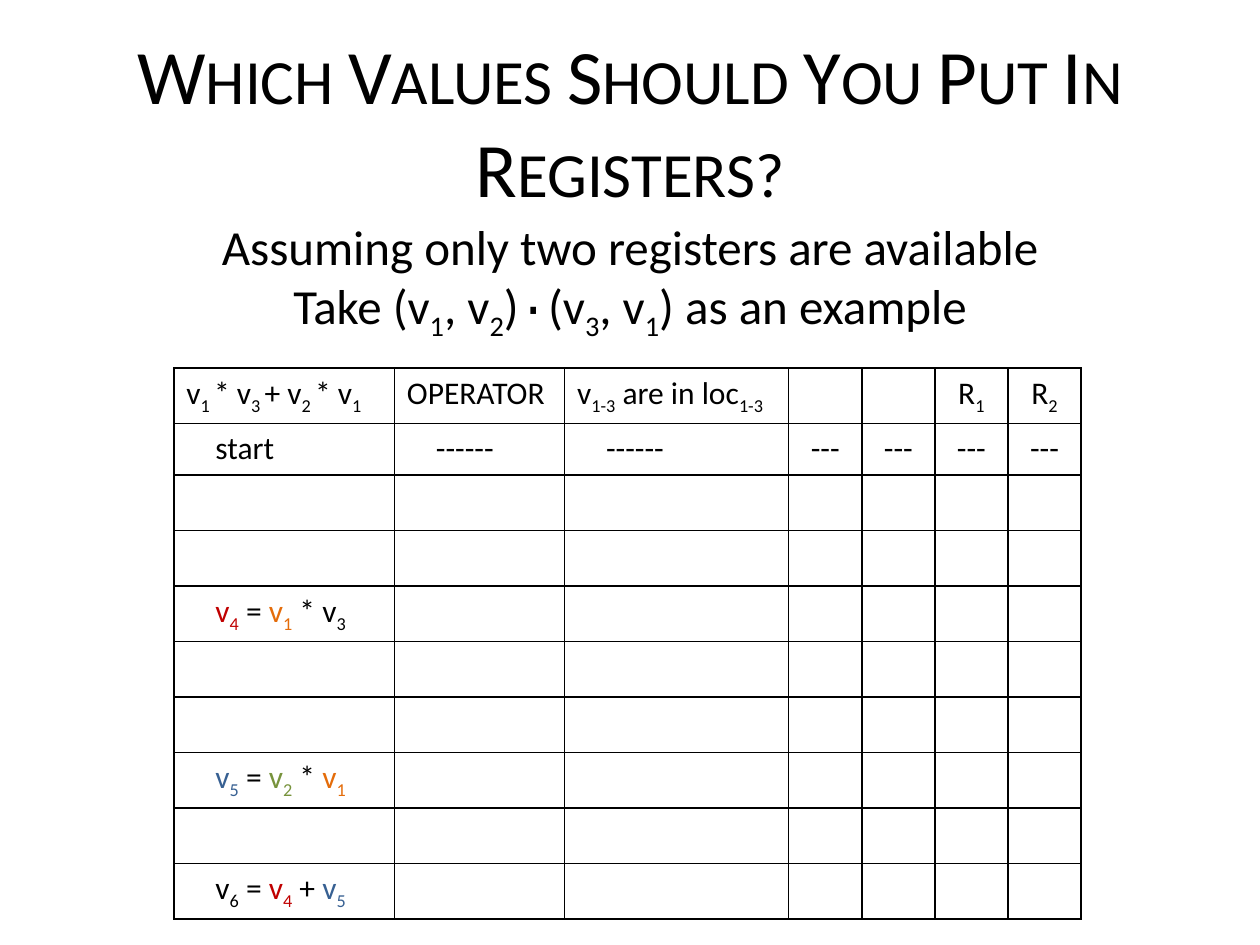
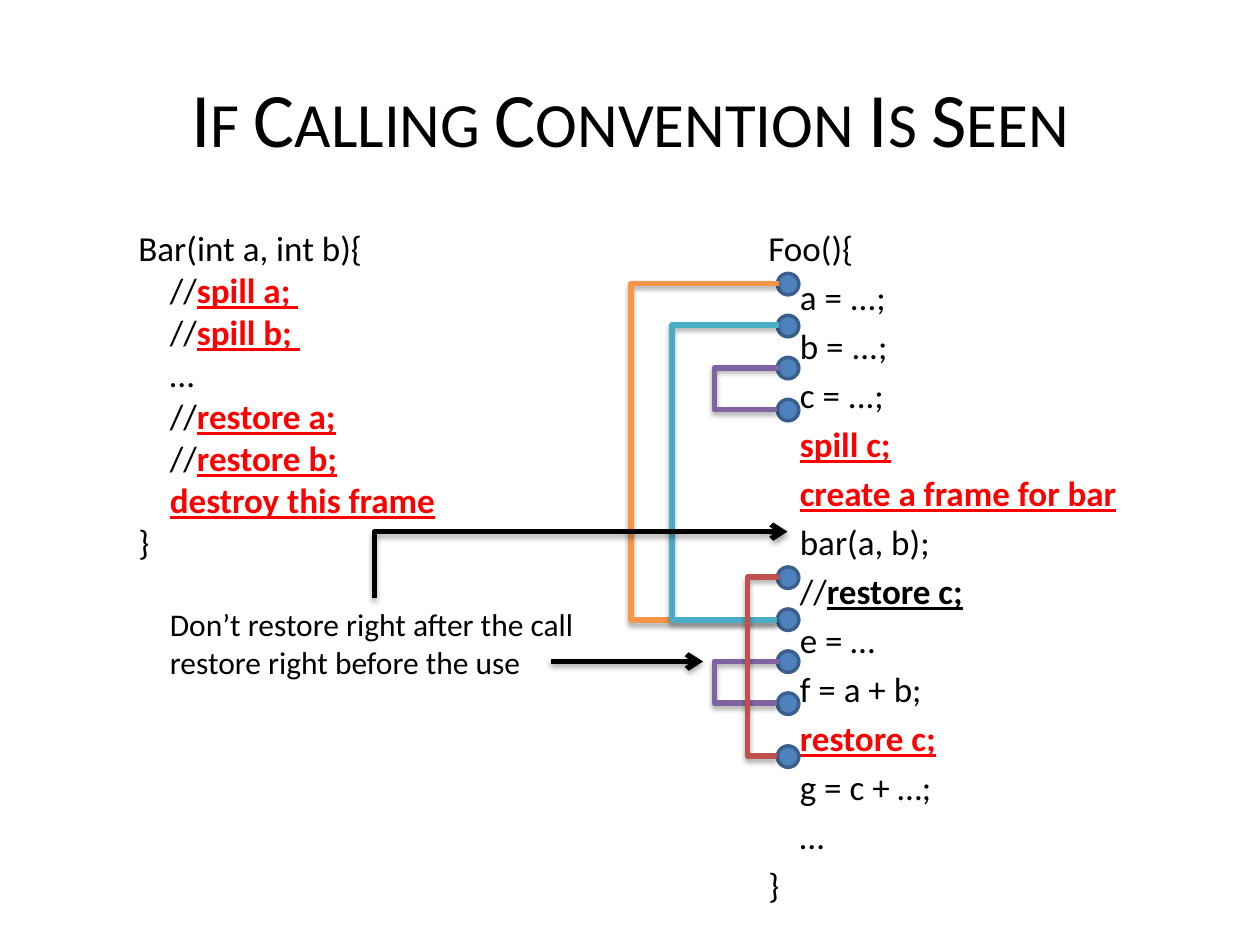
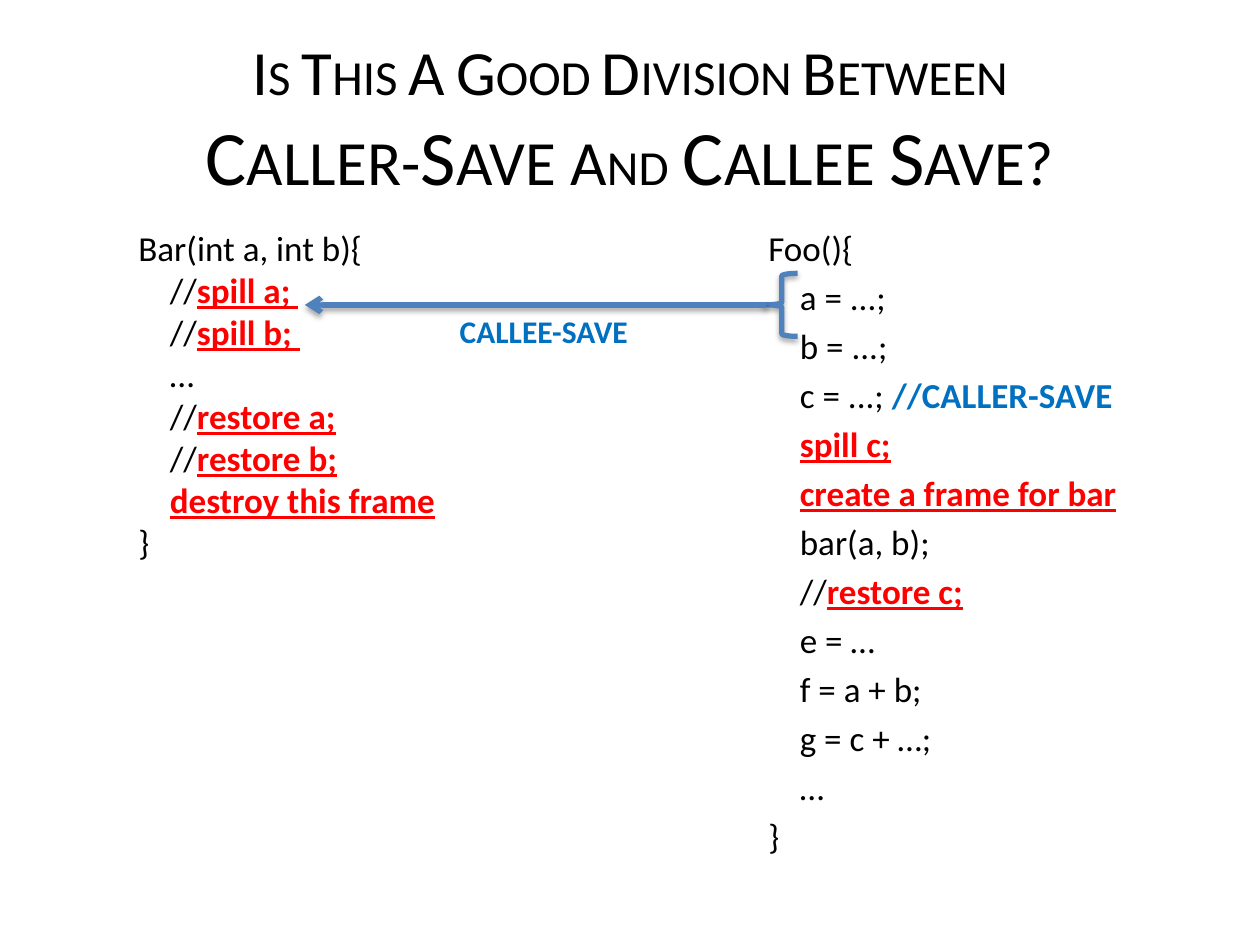
from itertools import groupby

from lxml import etree
from pptx import Presentation
from pptx import util as u
from pptx.dml.color import RGBColor
from pptx.enum import shapes, text
from pptx.oxml import ns

FONT = "Calibri"
BLACK = RGBColor(0x00, 0x00, 0x00)
RED = RGBColor(0xFF, 0x00, 0x00)
LABEL_BLUE = RGBColor(0x00, 0x70, 0xC0)
BLUE = RGBColor(0x4F, 0x81, 0xBD)
DOT_LINE = RGBColor(0x3A, 0x5F, 0x8C)
ORANGE = RGBColor(0xF7, 0x96, 0x46)
TEAL = RGBColor(0x4B, 0xAC, 0xC6)
PURPLE = RGBColor(0x80, 0x64, 0xA2)
BRICK = RGBColor(0xC0, 0x50, 0x4D)
V1_COLOR = RGBColor(0xE4, 0x6C, 0x0A)
V2_COLOR = RGBColor(0x77, 0x93, 0x3C)
V4_COLOR = RGBColor(0xC0, 0x00, 0x00)
V5_COLOR = RGBColor(0x37, 0x60, 0x92)

CENTER = text.PP_ALIGN.CENTER
INDENT = 0.25


def child(parent, tag, **attrs):
    return etree.SubElement(parent, ns.qn(tag), {k: str(v) for k, v in attrs.items()})


def add_run(p, content, size, color=BLACK, bold=False, underline=False, sub=False, font=FONT):
    r = p.add_run()
    r.text = content
    r.font.name = font
    r.font.size = u.Pt(size)
    r.font.color.rgb = color
    if bold:
        r.font.bold = True
    if underline:
        r.font.underline = True
    if sub:
        r.font._element.set("baseline", "-25000")


def add_pieces(p, pieces, size):
    for piece in [pieces] if isinstance(pieces, str) else pieces:
        if isinstance(piece, str):
            add_run(p, piece, size)
        else:
            content, style = piece
            add_run(p, content, size, **style)


def marked(content, color=RED):
    return content, dict(color=color, bold=True, underline=True)


def var(index, color=BLACK, name="v"):
    return [(name, dict(color=color)), (index, dict(color=color, sub=True))]


def indent(p, inches):
    p._p.get_or_add_pPr().set("marL", str(u.Inches(inches)))


def add_title(s, top, *lines):
    title = s.shapes.title
    title.left, title.top = u.Inches(0.5), u.Inches(top)
    title.width, title.height = u.Inches(9), u.Inches(1.25)
    tf = title.text_frame
    tf.auto_size = text.MSO_AUTO_SIZE.NONE
    tf.vertical_anchor = text.MSO_ANCHOR.MIDDLE
    p = tf.paragraphs[0]
    p.alignment = CENTER
    for i, line in enumerate(lines):
        if i:
            p.add_line_break()
        for words, big, small in line:
            for is_capital, letters in groupby(words, str.isupper):
                add_run(p, "".join(letters).upper(), big if is_capital else small)


def add_text(s, box, lines, size, wrap=False, align=None, space=0, block=False):
    tf = s.shapes.add_textbox(*map(u.Inches, box)).text_frame
    tf.word_wrap = wrap
    for i, line in enumerate(lines):
        p = tf.add_paragraph() if i else tf.paragraphs[0]
        p.alignment = align
        if i and space:
            p.space_before = u.Pt(space)
        if block and 0 < i < len(lines) - 1:
            indent(p, INDENT)
        add_pieces(p, line, size)


def add_shadow(shape):
    effects = child(shape._element.spPr, "a:effectLst")
    shadow = child(effects, "a:outerShdw", blurRad=40000, dist=23000, dir=5400000, rotWithShape=0)
    color = child(shadow, "a:srgbClr", val="000000")
    child(color, "a:alpha", val=35000)


def add_line(s, kind, begin, end, color, arrow=False):
    line = s.shapes.add_connector(kind, *map(u.Inches, begin + end))
    line.line.color.rgb = color
    line.line.width = u.Pt(3)
    if arrow:
        child(line.line._get_or_add_ln(), "a:tailEnd", type="arrow")
    add_shadow(line)
    return line


def add_bracket(s, x, top, bottom, color):
    right, gap = 6.18, 0.01
    line = add_line(s, shapes.MSO_CONNECTOR.ELBOW, (right - gap, bottom), (right, top), color)
    line._element.spPr.find(ns.qn("a:xfrm")).set("rot", "10800000")
    guides = line._element.spPr.find(ns.qn("a:prstGeom")).get_or_add_avLst()
    child(guides, "a:gd", name="adj1", fmla=f"val {round((right - x) / gap * 100000)}")


def add_corner_arrow(s, begin, end):
    (x1, y1), (x2, y2) = begin, end
    mid_x, mid_y = (x1 + x2) / 2, (y1 + y2) / 2
    half_w, half_h = (y1 - y2) / 2, (x2 - x1) / 2
    line = add_line(s, shapes.MSO_CONNECTOR.ELBOW, (mid_x + half_w, mid_y + half_h),
                    (mid_x - half_w, mid_y - half_h), BLACK, arrow=True)
    line._element.spPr.find(ns.qn("a:xfrm")).set("rot", "5400000")
    line._element.spPr.find(ns.qn("a:prstGeom")).set("prst", "bentConnector2")


def add_dot(s, top):
    dot = s.shapes.add_shape(shapes.MSO_SHAPE.OVAL, *map(u.Inches, (6.17, top, 0.17, 0.17)))
    dot.shadow.inherit = False
    dot.fill.solid()
    dot.fill.fore_color.rgb = BLUE
    dot.line.color.rgb = DOT_LINE
    dot.line.width = u.Pt(2)


def set_borders(cell):
    tc_pr = cell._tc.get_or_add_tcPr()
    for side in ("a:lnL", "a:lnR", "a:lnT", "a:lnB"):
        ln = child(tc_pr, side, w=u.Pt(1))
        child(child(ln, "a:solidFill"), "a:srgbClr", val=BLACK)


def add_register_table(s, rows, widths):
    frame = s.shapes.add_table(len(rows), len(widths), *map(u.Inches, (1.38, 2.92, 7.2, 4.37)))
    table = frame.table
    table.first_row = table.horz_banding = False
    for column, width in zip(table.columns, widths):
        column.width = u.Inches(width)
    for i, row in enumerate(rows):
        table.rows[i].height = u.Inches(0.41 if i == 1 else 0.44)
        for j in range(len(widths)):
            cell = table.cell(i, j)
            set_borders(cell)
            cell.fill.background()
            if j < len(row) and row[j]:
                p = cell.text_frame.paragraphs[0]
                if j > 2:
                    p.alignment = CENTER
                elif i:
                    indent(p, 0.23)
                add_pieces(p, row[j], 18)


def add_bar(s):
    lines = ["Bar(int a, int b){",
             ["//", marked("spill a; ")],
             ["//", marked("spill b; ")],
             "…",
             ["//", marked("restore a;")],
             ["//", marked("restore b;")],
             [marked("destroy this frame")],
             "}"]
    add_text(s, (1, 1.75, 2.58, 3.13), lines, 20, block=True)


def add_foo(s, c_line, restore, before_g=()):
    lines = ["Foo(){", "a = ...;", "b = ...;", c_line,
             [marked("spill c;")], [marked("create a frame for bar")],
             "bar(a, b);", ["//", restore], "e = …", "f = a + b;",
             *before_g, "g = c + …;", "…", "}"]
    add_text(s, (6, 1.75, 3, 4.95), lines, 20, wrap=True, space=4, block=True)


def build_registers(s):
    add_title(s, 0.33, [("Which Values Should You Put In Registers?", 44, 36)])
    add_text(s, (1, 1.67, 8, 1.04), [
        "Assuming only two registers are available",
        ["Take (", *var("1"), ", ", *var("2"), ")", ("∙", dict(font="Courier New")),
         "(", *var("3"), ", ", *var("1"), ") as an example"],
    ], 28, wrap=True, align=CENTER)
    v1, v2 = var("1", V1_COLOR), var("2", V2_COLOR)
    v4, v5 = var("4", V4_COLOR), var("5", V5_COLOR)
    header = [[*var("1 "), "* ", *var("3 "), "+ ", *var("2 "), "* ", *var("1")],
              "OPERATOR",
              [*var("1-3"), *var("1-3", name=" are in loc")],
              "", "", var("1", name="R"), var("2", name="R")]
    rows = [header,
            ["start"] + ["------"] * 2 + ["---"] * 4,
            [], [],
            [[*v4, " = ", *v1, " * ", *var("3")]],
            [], [],
            [[*v5, " = ", *v2, " * ", *v1]],
            [],
            [[*var("6"), " = ", *v4, " + ", *v5]]]
    add_register_table(s, rows, [1.75, 1.35, 1.78] + [0.58] * 4)


def build_convention(s):
    add_title(s, 0.3, [("If Calling Convention Is Seen", 44, 36)])
    add_foo(s, "c = ...;", marked("restore c;", BLACK), [[marked("restore c;")]])
    add_bar(s)
    for first in (2.17, 4.5):
        for i in range(4):
            add_dot(s, first + i / 3)
    add_dot(s, 5.92)
    for x, top, bottom, color in [(4.99, 2.25, 4.92, ORANGE), (5.32, 2.58, 4.92, TEAL),
                                  (5.66, 5.25, 5.58, PURPLE), (5.93, 4.58, 6, BRICK),
                                  (5.66, 2.92, 3.25, PURPLE)]:
        add_bracket(s, x, top, bottom, color)
    add_text(s, (1.25, 4.75, 3.45, 0.71),
             ["Don’t restore right after the call", "restore right before the use"], 18)
    add_line(s, shapes.MSO_CONNECTOR.STRAIGHT, (4.37, 5.25), (5.58, 5.25), BLACK, arrow=True)
    add_corner_arrow(s, (2.97, 4.75), (6.25, 4.22))


def build_division(s):
    add_title(s, 0.3, [("Is This A Good Division Between", 36, 28)],
              [("Caller-Save ", 44, 36), ("And", 36, 28), (" Callee Save?", 44, 36)])
    label = dict(color=LABEL_BLUE, bold=True)
    add_foo(s, ["c = ...; ", ("//CALLER-SAVE", label)], marked("restore c;"))
    add_bar(s)
    brace = s.shapes.add_shape(shapes.MSO_SHAPE.LEFT_BRACE, *map(u.Inches, (6.08, 2.17, 0.25, 0.5)))
    brace.fill.background()
    brace.line.color.rgb = BLUE
    brace.line.width = u.Pt(3)
    add_shadow(brace)
    arrow = add_line(s, shapes.MSO_CONNECTOR.STRAIGHT, (6.08, 2.42), (2.42, 2.42), BLUE, arrow=True)
    arrow.begin_connect(brace, 1)
    add_text(s, (3.55, 2.43, 1.55, 0.4), [[("CALLEE-SAVE", label)]], 18)


def main():
    prs = Presentation()
    prs.slide_width, prs.slide_height = u.Inches(10), u.Inches(7.5)
    for build in (build_registers, build_convention, build_division):
        build(prs.slides.add_slide(prs.slide_layouts[5]))
    prs.save("out.pptx")


if __name__ == "__main__":
    main()
